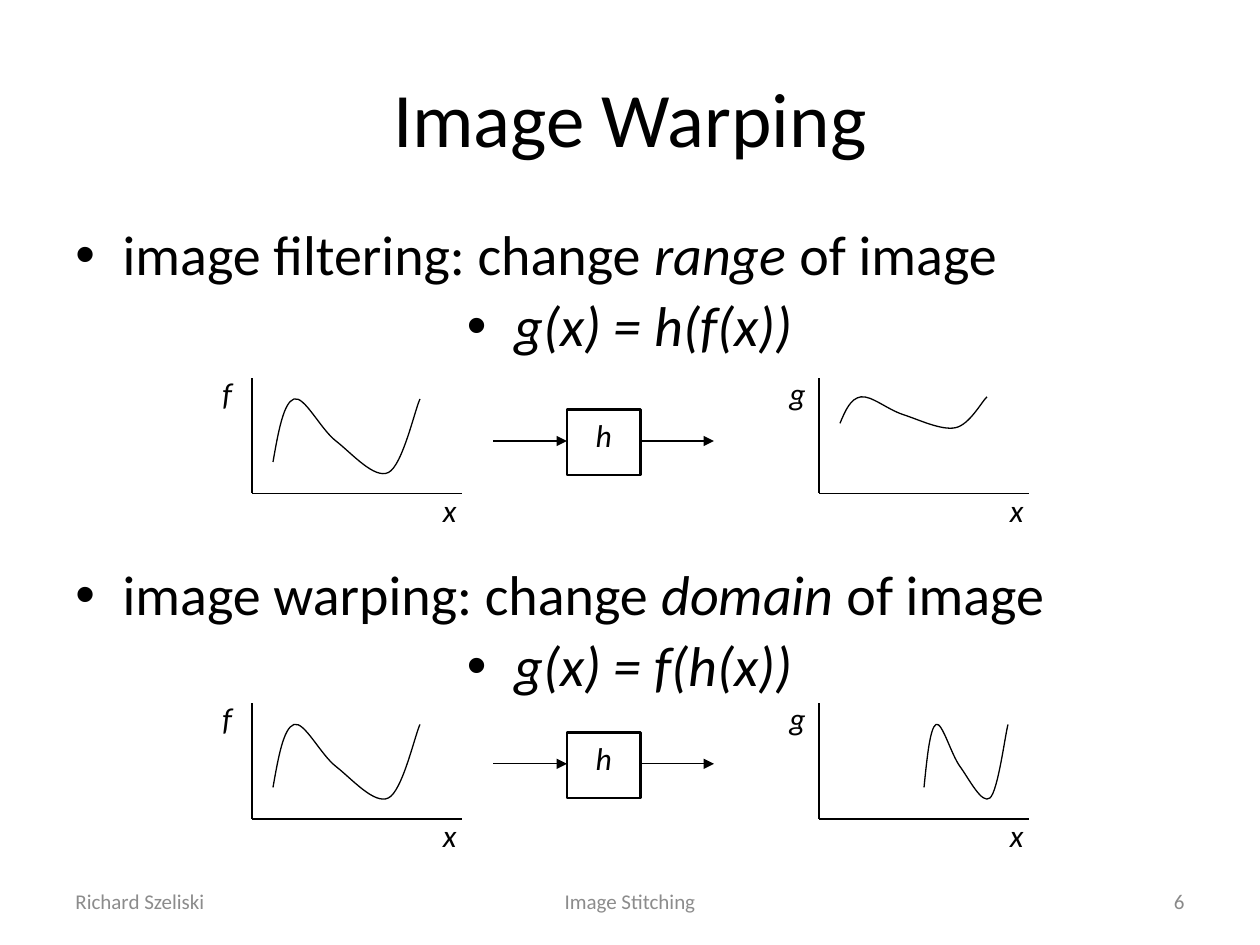
from lxml.etree import SubElement
from pptx import Presentation
from pptx.dml.color import RGBColor
from pptx.enum.shapes import MSO_CONNECTOR as Connector, MSO_SHAPE as Shape
from pptx.enum.text import MSO_ANCHOR as Anchor, PP_ALIGN as Align
from pptx.oxml.ns import qn
from pptx.util import Pt


def write(shape, paragraphs, size, color="000000", align=Align.LEFT, anchor=Anchor.TOP):
    """Fill a shape with paragraphs, each a list of (text, italic) runs."""
    frame = shape.text_frame
    frame.word_wrap = True
    frame.vertical_anchor = anchor
    for index, runs in enumerate(paragraphs):
        paragraph = frame.add_paragraph() if index else frame.paragraphs[0]
        paragraph.alignment = align
        for text, italic in runs:
            run = paragraph.add_run()
            run.text = text
            font_format = {"name": "Calibri", "size": Pt(size), "italic": italic}
            for name, value in font_format.items():
                setattr(run.font, name, value)
            run.font.color.rgb = RGBColor.from_string(color)
    return frame


def add_line(x1, y1, x2, y2, arrow=False):
    line = slide.shapes.add_connector(Connector.STRAIGHT, Pt(x1), Pt(y1), Pt(x2), Pt(y2))
    line.line.width = Pt(0.75)
    line.line.color.rgb = RGBColor.from_string("000000")
    properties = line.line._get_or_add_ln()
    if arrow:
        SubElement(properties, qn("a:tailEnd"), type="triangle")
    SubElement(properties.getparent(), qn("a:effectLst"))


presentation = Presentation()
presentation.slide_width, presentation.slide_height = Pt(720), Pt(540)
slide = presentation.slides.add_slide(presentation.slide_layouts[5])

title = slide.shapes.title
title.left, title.top, title.width, title.height = Pt(36), Pt(21.6), Pt(648), Pt(90)
write(title, [[("Image Warping", False)]], 44, align=Align.CENTER, anchor=Anchor.MIDDLE)

# Bulleted text: a statement and its centred formula, twice
body = slide.shapes.add_textbox(Pt(36), Pt(126), Pt(648), Pt(356.4))
body_frame = write(body, [
    [("image filtering: change ", False), ("range", True), (" of image", False)],
    [("g(x) = h(f(x))", True)],
    [("image warping: change ", False), ("domain", True), (" of image", False)],
    [("g(x) = f(h(x))", True)],
], 32)
alignments = [Align.LEFT, Align.CENTER] * 2
for paragraph, alignment, space in zip(body_frame.paragraphs, alignments, [6, 6, 119.6, 6]):
    paragraph_format = {"alignment": alignment, "line_spacing": 0.9, "space_before": Pt(space)}
    for name, value in paragraph_format.items():
        setattr(paragraph, name, value)
    properties = paragraph._p.get_or_add_pPr()
    properties.set("marL", str(Pt(27)))
    properties.set("indent", str(Pt(-27)))
    SubElement(properties, qn("a:buFont"), typeface="Arial")
    SubElement(properties, qn("a:buChar"), char="•")

# Signal f: a start, then three Bézier points a segment, from the top of the vertical axis
signal = [
    (12, 48),
    (15, 31), (18, 14), (24, 12),
    (30, 10), (39, 29), (48, 36),
    (57, 43), (70, 58), (78, 54),
    (86, 50), (93, 18.5), (96, 12),
]
filtered = [(x, 5.75 + 0.42 * y) for x, y in signal]
warped = [(60 + (x - 12) * 4 / 7, y) for x, y in signal]

# Graphs: left, top, name of the function, curve
graphs = [
    (144, 216, "f", signal),
    (468, 216, "g", filtered),
    (144, 402, "f", signal),
    (468, 402, "g", warped),
]
for left, top, function_name, points in graphs:
    add_line(left, top, left, top + 66)
    add_line(left, top + 66, left + 120, top + 66)
    scaled = [(round((left + x) * 100), round((top + y) * 100)) for x, y in points]
    builder = slide.shapes.build_freeform(*scaled[0], scale=Pt(1) / 100)
    builder.add_line_segments(scaled[1:], close=False)
    curve = builder.convert_to_shape()
    outline = next(curve._element.iter(qn("a:path")))
    segments = outline.findall(qn("a:lnTo"))
    for start in range(0, len(segments), 3):
        bezier = SubElement(outline, qn("a:cubicBezTo"))
        for segment in segments[start:start + 3]:
            bezier.append(segment[0])
            outline.remove(segment)
    curve.shadow.inherit = False
    curve.fill.background()
    curve.line.width = Pt(0.75)
    curve.line.color.rgb = RGBColor.from_string("000000")
    for text, x, y in [(function_name, left - 24, top - 6), ("x", left + 102, top + 61)]:
        label = slide.shapes.add_textbox(Pt(x), Pt(y), Pt(30), Pt(28.8))
        write(label, [[(text, True)]], 18)

# Transform h between the two graphs of each row
for arrow_y in (252, 436.5):
    box = slide.shapes.add_shape(Shape.RECTANGLE, Pt(324), Pt(arrow_y - 18), Pt(42), Pt(37.5))
    box.shadow.inherit = False
    box.fill.background()
    box.line.width = Pt(1.5)
    box.line.color.rgb = RGBColor.from_string("000000")
    write(box, [[("h", True)]], 18, align=Align.CENTER)
    for arrow_x in (282, 366):
        add_line(arrow_x, arrow_y, arrow_x + 42, arrow_y, arrow=True)

footers = [
    ("Richard Szeliski", 36, 168, "8C8C8C", Align.LEFT),
    ("Image Stitching", 246, 228, "8C8C8C", Align.CENTER),
    ("6", 516, 168, "898989", Align.RIGHT),
]
for text, left, width, color, alignment in footers:
    footer = slide.shapes.add_textbox(Pt(left), Pt(500.5), Pt(width), Pt(28.75))
    write(footer, [[(text, False)]], 12, color, alignment, Anchor.MIDDLE)

presentation.save("out.pptx")
